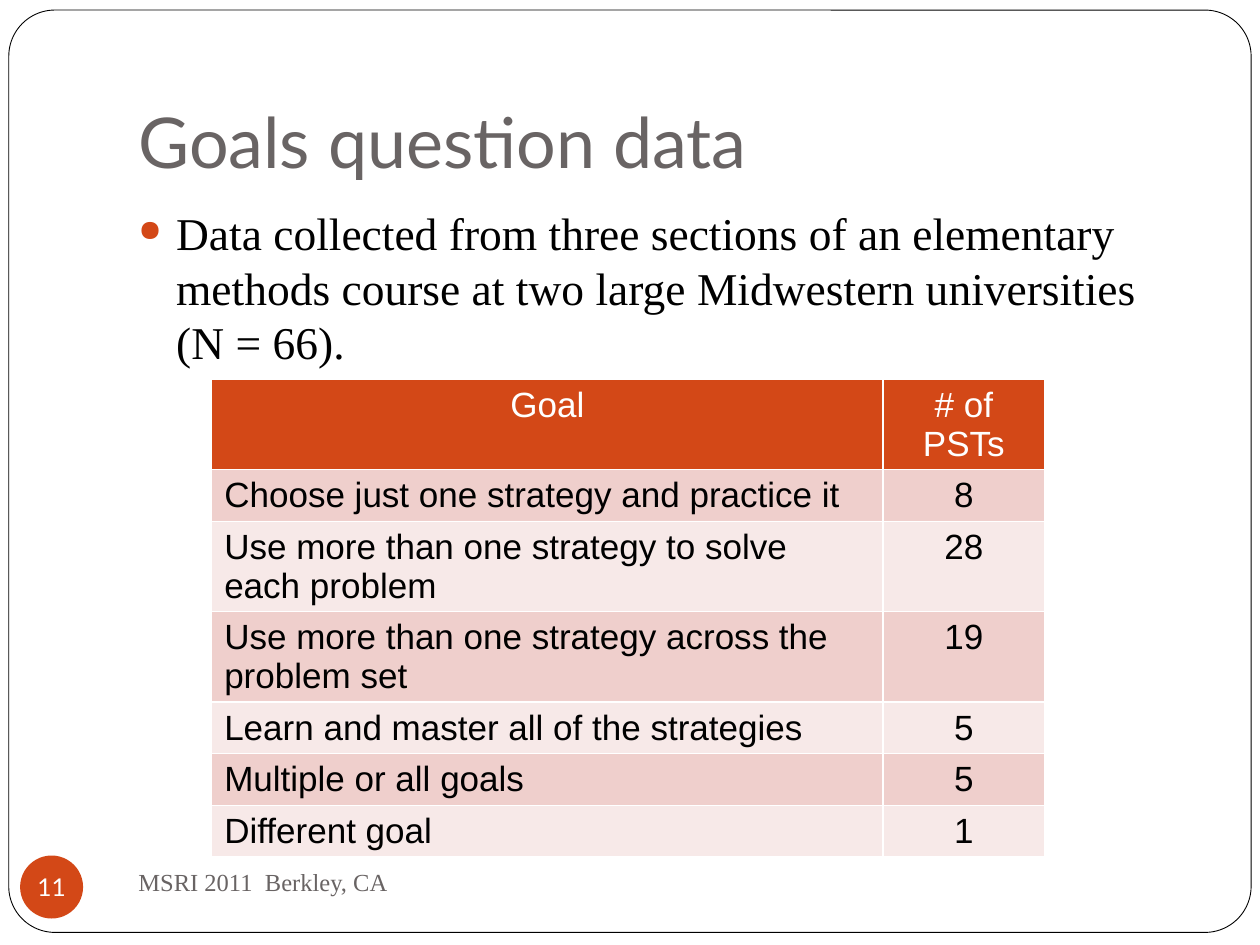
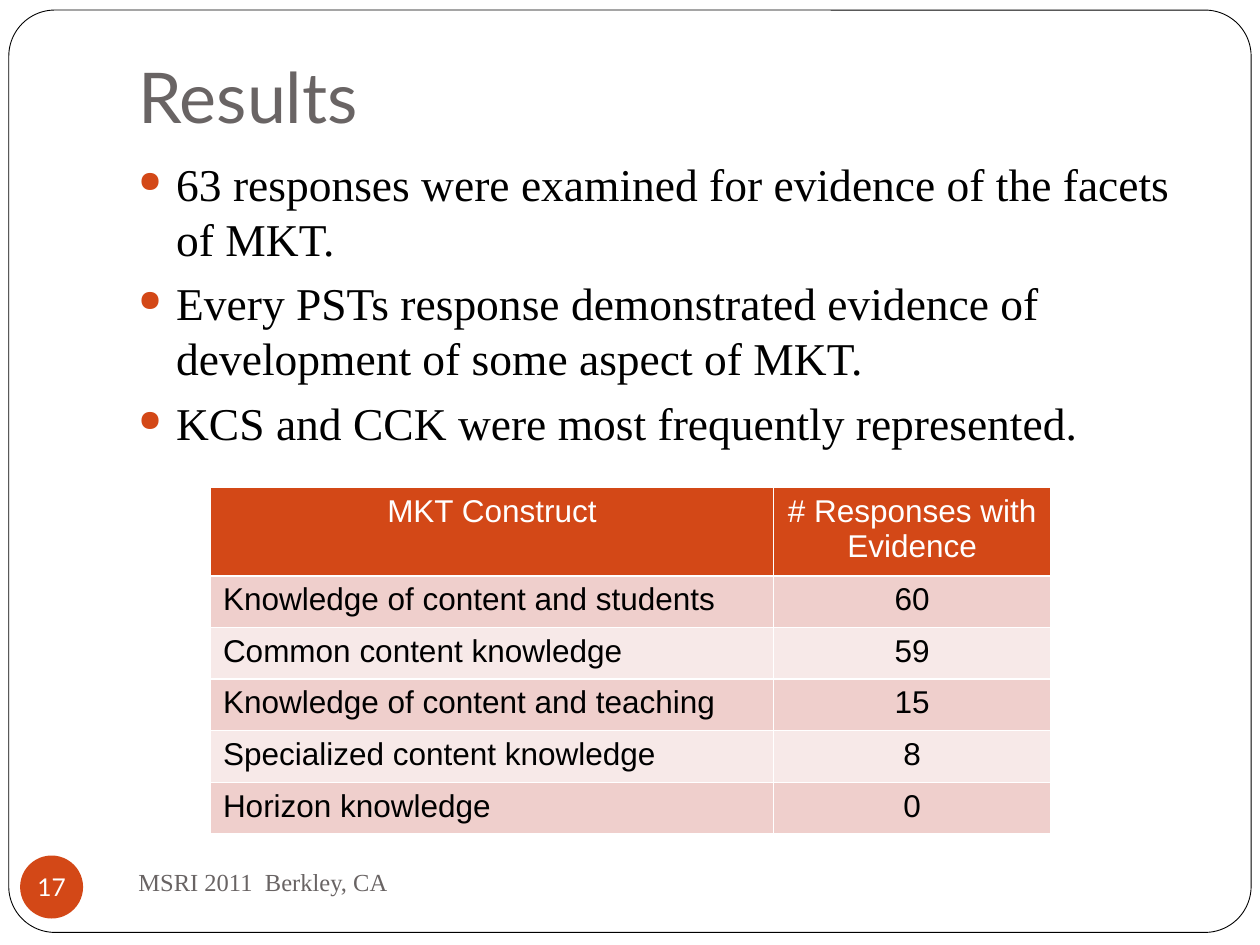
"""Build two data slides that share a rounded frame, title, footer and page badge."""
from dataclasses import dataclass

import pptx
import pptx.dml.color
import pptx.enum.shapes
import pptx.enum.text
import pptx.oxml
import pptx.oxml.ns
import pptx.util

RGBColor = pptx.dml.color.RGBColor
Pt = pptx.util.Pt
Align = pptx.enum.text.PP_ALIGN
Anchor = pptx.enum.text.MSO_ANCHOR
Kind = pptx.enum.shapes.MSO_SHAPE

PX = 9144
RED = RGBColor(0xD3, 0x48, 0x17)
GRAY = RGBColor(0x69, 0x64, 0x64)
BLACK = RGBColor(0, 0, 0)
WHITE = RGBColor(0xFF, 0xFF, 0xFF)
BANDS = (RGBColor(0xEF, 0xCF, 0xCC), RGBColor(0xF7, 0xE9, 0xE8))
FOOTER = "MSRI 2011  Berkley, CA"
NS = pptx.oxml.ns.nsdecls("a")


@dataclass(frozen=True)
class Style:
    name: str
    size: int
    color: RGBColor
    align: Align = Align.LEFT


@dataclass(frozen=True)
class Box:
    left: int
    top: int
    width: int
    height: int

    def emu(self) -> list[int]:
        return [n * PX for n in (self.left, self.top, self.width, self.height)]


@dataclass(frozen=True)
class Grid:
    left: int
    top: int
    cols: tuple[int, int]
    head: int
    size: int
    rows: tuple[tuple[str, str], ...]


@dataclass(frozen=True)
class Page:
    title: str
    number: int
    base: int
    top: int
    points: tuple[str, ...]
    grid: Grid


TITLE = Style("Lato", 40, GRAY)
BODY = Style("Times New Roman", 26, BLACK)
FOOT = Style("Times New Roman", 14, GRAY)
BADGE = Style("Lato", 14, WHITE, Align.CENTER)

ROW = 41
PAGES = (
    Page(
        "Goals question data", 11, 155, 158,
        ("Data collected from three sections of an elementary methods course "
         "at two large Midwestern universities (N = 66).",),
        Grid(168, 301, (533, 128), ROW, 20, (
            ("Goal", "# of PSTs"),
            ("Choose just one strategy and practice it", "8"),
            ("Use more than one strategy to solve each problem", "28"),
            ("Use more than one strategy across the problem set", "19"),
            ("Learn and master all of the strategies", "5"),
            ("Multiple or all goals", "5"),
            ("Different goal", "1"),
        )),
    ),
    Page(
        "Results", 17, 119, 119,
        ("63 responses were examined for evidence of the facets of MKT.",
         "Every PSTs response demonstrated evidence of development of some "
         "aspect of MKT.",
         "KCS and CCK were most frequently represented."),
        Grid(167, 387, (447, 220), 70, 18, (
            ("MKT Construct", "# Responses with Evidence"),
            ("Knowledge of content and students", "60"),
            ("Common content knowledge", "59"),
            ("Knowledge of content and teaching", "15"),
            ("Specialized content knowledge", "8"),
            ("Horizon knowledge", "0"),
        )),
    ),
)


def apply(target, values: dict) -> None:
    for key, value in values.items():
        setattr(target, key, value)


def write(para, text: str, style: Style) -> None:
    para.alignment = style.align
    run = para.add_run()
    run.text = text
    apply(run.font, {"name": style.name, "size": Pt(style.size), "bold": False})
    run.font.color.rgb = style.color


def frame(shape, anchor: Anchor, pads: tuple[int, ...], wrap: bool = True):
    text = shape.text_frame
    left, top, right, bottom = (n * PX for n in pads)
    apply(text, {
        "word_wrap": wrap, "vertical_anchor": anchor, "margin_left": left,
        "margin_top": top, "margin_right": right, "margin_bottom": bottom,
    })
    return text


def label(slide, box: Box, text: str, style: Style, anchor: Anchor, base: int) -> None:
    shape = slide.shapes.add_textbox(*box.emu())
    write(frame(shape, anchor, (10, 5, 10, base)).paragraphs[0], text, style)


def solid(slide, kind: Kind, box: Box, fill: RGBColor):
    shape = slide.shapes.add_shape(kind, *box.emu())
    shape.shadow.inherit = False
    shape.fill.solid()
    shape.fill.fore_color.rgb = fill
    return shape


def border(slide) -> None:
    shape = solid(slide, Kind.ROUNDED_RECTANGLE, Box(7, 8, 986, 732), WHITE)
    shape.adjustments[0] = 0.05
    shape.line.color.rgb = BLACK
    shape.line.width = Pt(0.5)


def badge(slide, number: int) -> None:
    shape = solid(slide, Kind.OVAL, Box(16, 679, 50, 50), RED)
    shape.line.fill.background()
    text = frame(shape, Anchor.MIDDLE, (0, 0, 0, 0), False)
    write(text.paragraphs[0], str(number), BADGE)


def bullet(para) -> None:
    props = para._p.get_or_add_pPr()
    para.space_before = Pt(5.8)
    props.set("marL", str(30 * PX))
    props.set("indent", str(-30 * PX))
    for part in (
        f'<a:buClr {NS}><a:srgbClr val="{RED}"/></a:buClr>',
        f'<a:buSzPct {NS} val="65000"/>',
        f'<a:buChar {NS} char="●"/>',
    ):
        props.append(pptx.oxml.parse_xml(part))


def body(slide, top: int, points: tuple[str, ...]) -> None:
    shape = slide.shapes.add_textbox(*Box(100, top, 850, 658 - top).emu())
    text = frame(shape, Anchor.TOP, (10, 5, 10, 5))
    for i, point in enumerate(points):
        para = text.add_paragraph() if i else text.paragraphs[0]
        write(para, point, BODY)
        bullet(para)


def paint(cell, fill: RGBColor) -> None:
    apply(cell, {"margin_top": 5 * PX, "margin_bottom": 0})
    props = cell._tc.get_or_add_tcPr()
    for side in "LRTB":
        props.append(pptx.oxml.parse_xml(
            f'<a:ln{side} {NS} w="{Pt(1)}"><a:solidFill>'
            f'<a:srgbClr val="{WHITE}"/></a:solidFill></a:ln{side}>'))
    cell.fill.solid()
    cell.fill.fore_color.rgb = fill


def table(slide, grid: Grid) -> None:
    count = len(grid.rows)
    box = Box(grid.left, grid.top, sum(grid.cols), grid.head + ROW * (count - 1))
    made = slide.shapes.add_table(count, len(grid.cols), *box.emu()).table
    apply(made, {"first_row": False, "horz_banding": False})
    for col, width in zip(made.columns, grid.cols):
        col.width = width * PX
    for r, texts in enumerate(grid.rows):
        made.rows[r].height = (ROW if r else grid.head) * PX
        for c, text in enumerate(texts):
            cell = made.cell(r, c)
            align = Align.LEFT if r and not c else Align.CENTER
            style = Style("Arial", grid.size, BLACK if r else WHITE, align)
            paint(cell, BANDS[(r - 1) % 2] if r else RED)
            write(cell.text_frame.paragraphs[0], text, style)


def build(deck, page: Page) -> None:
    slide = deck.slides.add_slide(deck.slide_layouts[6])
    border(slide)
    label(slide, Box(100, 30, 850, page.base - 30), page.title, TITLE,
          Anchor.BOTTOM, 10)
    label(slide, Box(100, 675, 433, 50), FOOTER, FOOT, Anchor.MIDDLE, 5)
    badge(slide, page.number)
    body(slide, page.top, page.points)
    table(slide, page.grid)


def main() -> None:
    deck = pptx.Presentation()
    apply(deck, {"slide_width": 1000 * PX, "slide_height": 750 * PX})
    for page in PAGES:
        build(deck, page)
    deck.save("out.pptx")


if __name__ == "__main__":
    main()
